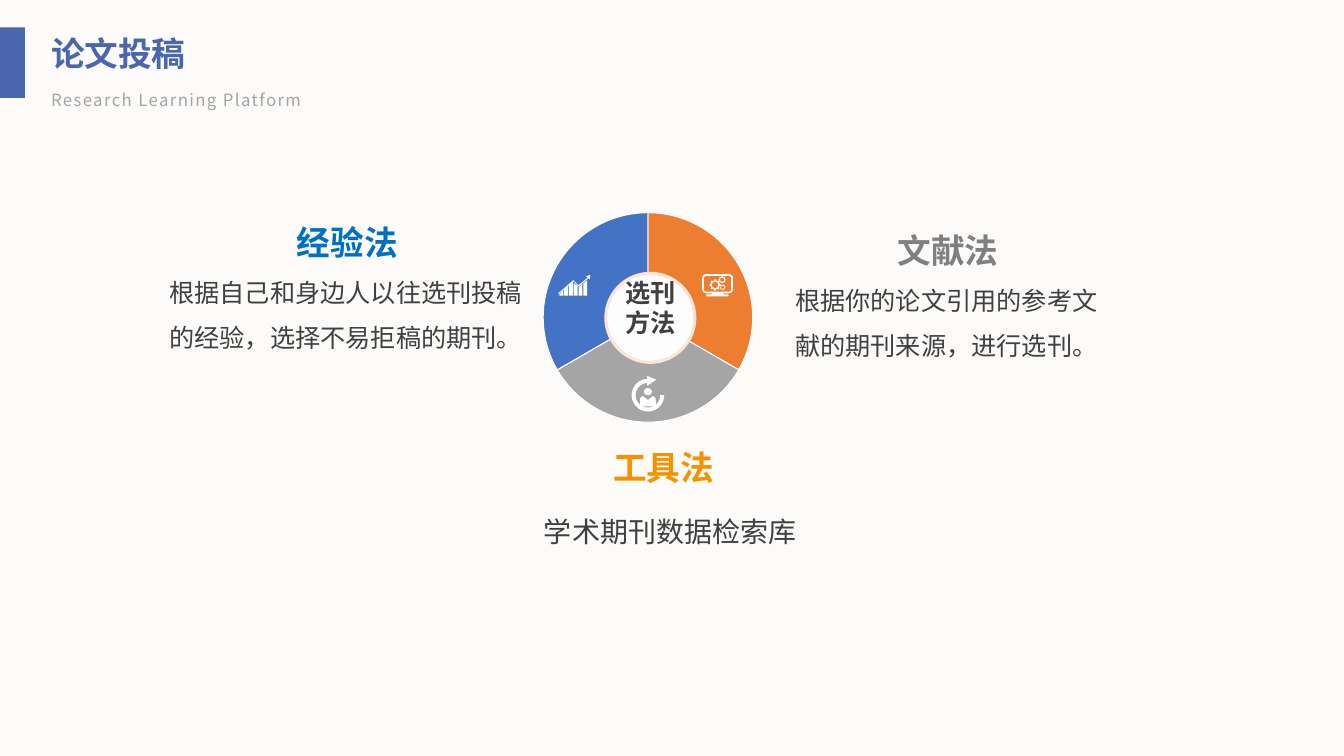
import math

import pptx
import pptx.dml.color
import pptx.enum.shapes
import pptx.enum.text
import pptx.oxml
import pptx.oxml.ns
import pptx.util

Cm, Pt = pptx.util.Cm, pptx.util.Pt
RGBColor = pptx.dml.color.RGBColor
SHAPE = pptx.enum.shapes.MSO_SHAPE
ALIGN = pptx.enum.text.PP_ALIGN
ANCHOR = pptx.enum.text.MSO_ANCHOR

CREAM = RGBColor(0xFC, 0xFB, 0xF9)
WHITE = RGBColor(0xFF, 0xFF, 0xFF)
HUB_WHITE = RGBColor(0xFD, 0xFD, 0xFE)
PEACH = RGBColor(0xFB, 0xE5, 0xD6)
INDIGO = RGBColor(0x4A, 0x66, 0xAC)
BLUE = RGBColor(0x44, 0x72, 0xC4)
ORANGE = RGBColor(0xED, 0x7D, 0x31)
GRAY = RGBColor(0xA5, 0xA5, 0xA5)
SUBTITLE_GRAY = RGBColor(0xA4, 0xA4, 0xA4)
HEADING_BLUE = RGBColor(0x00, 0x70, 0xC0)
HEADING_GRAY = RGBColor(0x80, 0x80, 0x80)
HEADING_ORANGE = RGBColor(0xF6, 0x92, 0x00)
DARK = RGBColor(0x40, 0x40, 0x40)


def arc(x, y, radius, start=0, end=360, step=3):
    """Points on a circle, in degrees clockwise from the top."""
    angles = [math.radians(angle) for angle in range(start, end + 1, step)]
    return [(x + radius * math.sin(a), y - radius * math.cos(a)) for a in angles]


class SlideBuilder:
    """Holds the style and the current slide; lengths are in centimetres."""

    font = "Noto Sans CJK SC"
    body_font = "Arial"

    def __init__(self, slide):
        self.slide = slide
        slide.background.fill.solid()
        slide.background.fill.fore_color.rgb = CREAM

    def paint(self, shape, fill=None, line=None, width=0.75):
        shape.shadow.inherit = False
        if fill is None:
            shape.fill.background()
        else:
            shape.fill.solid()
            shape.fill.fore_color.rgb = fill
        if line is None:
            shape.line.fill.background()
        else:
            shape.line.color.rgb = line
            shape.line.width = Pt(width)
        return shape

    def preset(self, kind, box, fill=None, line=None, width=0.75):
        shape = self.slide.shapes.add_shape(kind, *map(Cm, box))
        return self.paint(shape, fill, line, width)

    def outline(self, contours, fill=WHITE, line=None, width=0.75):
        """Closed polygons in one shape; an inner contour makes a hole."""
        contours = [[(Cm(x), Cm(y)) for x, y in points] for points in contours]
        builder = self.slide.shapes.build_freeform(*contours[0][0])
        builder.add_line_segments(contours[0][1:], close=True)
        for points in contours[1:]:
            builder.move_to(*points[0])
            builder.add_line_segments(points[1:], close=True)
        return self.paint(builder.convert_to_shape(), fill, line, width)

    def gear(self, x, y, radius):
        teeth = [
            point
            for tooth in range(0, 360, 45)
            for size, start in ((radius, tooth - 9), (radius * 0.8, tooth + 14))
            for point in arc(x, y, size, start, start + 18, 18)
        ]
        self.outline([teeth, arc(x, y, radius * 0.58, step=15)])

    def frame(self, shape, insets=(0, 0, 0, 0)):
        frame = shape.text_frame
        frame.word_wrap = True
        frame.auto_size = pptx.enum.text.MSO_AUTO_SIZE.NONE
        frame.vertical_anchor = ANCHOR.TOP
        (frame.margin_left, frame.margin_top,
         frame.margin_right, frame.margin_bottom) = map(Cm, insets)
        return frame

    def style(self, paragraph, size, color, bold=False, align=ALIGN.LEFT,
              spacing=1.0, font=None, tracking=0):
        paragraph.alignment = align
        paragraph.line_spacing = spacing
        for run in paragraph.runs:
            run.font.size = Pt(size)
            run.font.bold = bold
            run.font.color.rgb = color
            run.font.name = font or self.font
            properties = run.font._element
            if tracking:
                properties.set("spc", str(tracking * 100))
            east_asian = pptx.oxml.parse_xml(
                f'<a:ea {pptx.oxml.ns.nsdecls("a")} typeface="{self.font}"/>')
            properties.append(east_asian)

    def title(self, text, box):
        shape = self.slide.shapes.title
        shape.left, shape.top, shape.width, shape.height = map(Cm, box)
        frame = self.frame(shape, (0.25, 0.13, 0.25, 0.13))
        frame.text = text
        self.style(frame.paragraphs[0], 24, INDIGO, bold=True)

    def text(self, text, box, size, color, insets=(0, 0, 0, 0), **style):
        shape = self.slide.shapes.add_textbox(*map(Cm, box))
        frame = self.frame(shape, insets)
        frame.text = text
        self.style(frame.paragraphs[0], size, color, **style)
        return frame

    def heading(self, text, box, color, spacing=1.0):
        return self.text(text, box, 24, color, bold=True,
                         align=ALIGN.CENTER, spacing=spacing)

    def method(self, name, description, box, color, spacing=1.0):
        """A heading with its description below, in one box."""
        paragraph = self.heading(name, box, color, spacing).add_paragraph()
        paragraph.text = description
        self.style(paragraph, 18, DARK, spacing=1.5, font=self.body_font)


def draw_wheel(builder):
    x, y, radius = 16.33, 8.0, 2.64
    for index, color in enumerate((ORANGE, GRAY, BLUE)):
        start = index * 120
        sector = [(x, y)] + arc(x, y, radius, start, start + 120)
        builder.outline([sector], color, WHITE)
    hub = builder.outline([arc(16.39, 8.01, 1.12)], HUB_WHITE, PEACH, 2.25)
    frame = builder.frame(hub, (0.3, 0.1, 0.3, 0.1))
    frame.text = "选刊方法"
    builder.style(frame.paragraphs[0], 18, DARK, bold=True, align=ALIGN.CENTER)


def draw_growth_icon(builder):
    bar_tops = [(7.42, 7.32), (7.29, 7.21), (7.16, 7.09),
                (7.14, 7.21), (7.24, 7.14), (7.14, 7.06)]
    for index, (left_top, right_top) in enumerate(bar_tops):
        left, right, bottom = 14.1 + index * 0.12, 14.2 + index * 0.12, 7.45
        builder.outline([[(left, left_top), (right, right_top),
                          (right, bottom), (left, bottom)]])
    trend = [(14.07, 7.39), (14.45, 7.06), (14.58, 7.19), (14.83, 6.98)]
    builder.outline([trend + [(px, py + 0.03) for px, py in reversed(trend)]])
    builder.outline([[(14.77, 6.96), (14.88, 6.93), (14.86, 7.04)]])


def draw_monitor_icon(builder):
    builder.preset(SHAPE.ROUNDED_RECTANGLE, (17.72, 6.93, 0.73, 0.44),
                   line=WHITE, width=1.25)
    builder.outline([[(17.96, 7.39), (18.21, 7.39), (18.26, 7.43), (17.92, 7.43)]])
    builder.preset(SHAPE.ROUNDED_RECTANGLE, (17.8, 7.42, 0.56, 0.05), WHITE)
    for x, y, radius in ((18.02, 7.18, 0.14), (18.21, 7.24, 0.07), (18.2, 7.05, 0.09)):
        builder.gear(x, y, radius)


def draw_cycle_icon(builder):
    x, y = 16.33, 9.96
    ring = arc(x, y, 0.41, 90, 360) + arc(x, y, 0.31, 90, 360)[::-1]
    builder.outline([ring])
    builder.outline([[(16.31, 9.47), (16.54, 9.57), (16.31, 9.72)]])
    builder.preset(SHAPE.OVAL, (16.23, 9.78, 0.2, 0.18), WHITE)
    builder.outline([[(16.13, 10.24), (16.13, 10.03), (16.2, 9.98), (16.33, 10.08),
                      (16.46, 9.98), (16.52, 10.03), (16.54, 10.24)]])


def main():
    presentation = pptx.Presentation()
    presentation.slide_width, presentation.slide_height = Cm(33.87), Cm(19.05)
    title_only = presentation.slide_layouts[5]
    builder = SlideBuilder(presentation.slides.add_slide(title_only))

    builder.preset(SHAPE.RECTANGLE, (0, 0.69, 0.63, 1.78), INDIGO)
    builder.title("论文投稿", (1.04, 0.69, 16.5, 1.27))
    builder.text("Research Learning Platform", (1.04, 1.88, 13.3, 0.94), 12,
                 SUBTITLE_GRAY, (0.25, 0.13, 0.25, 0.13), align=ALIGN.JUSTIFY,
                 spacing=1.5, tracking=1)

    draw_wheel(builder)
    draw_growth_icon(builder)
    draw_monitor_icon(builder)
    draw_cycle_icon(builder)

    builder.method("经验法", "根据自己和身边人以往选刊投稿的经验，选择不易拒稿的期刊。",
                   (4.27, 5.18, 8.97, 3.63), HEADING_BLUE, spacing=1.4)
    builder.method("文献法", "根据你的论文引用的参考文献的期刊来源，进行选刊。",
                   (20.04, 5.79, 7.7, 3.2), HEADING_GRAY)
    builder.heading("工具法", (12.8, 11.25, 7.85, 1.93), HEADING_ORANGE)
    builder.text("学术期刊数据检索库", (13.46, 12.4, 6.96, 1.4), 20, DARK,
                 (0.25, 0.13, 0.25, 0.13), spacing=1.5, font=builder.body_font)

    presentation.save("out.pptx")


if __name__ == "__main__":
    main()
